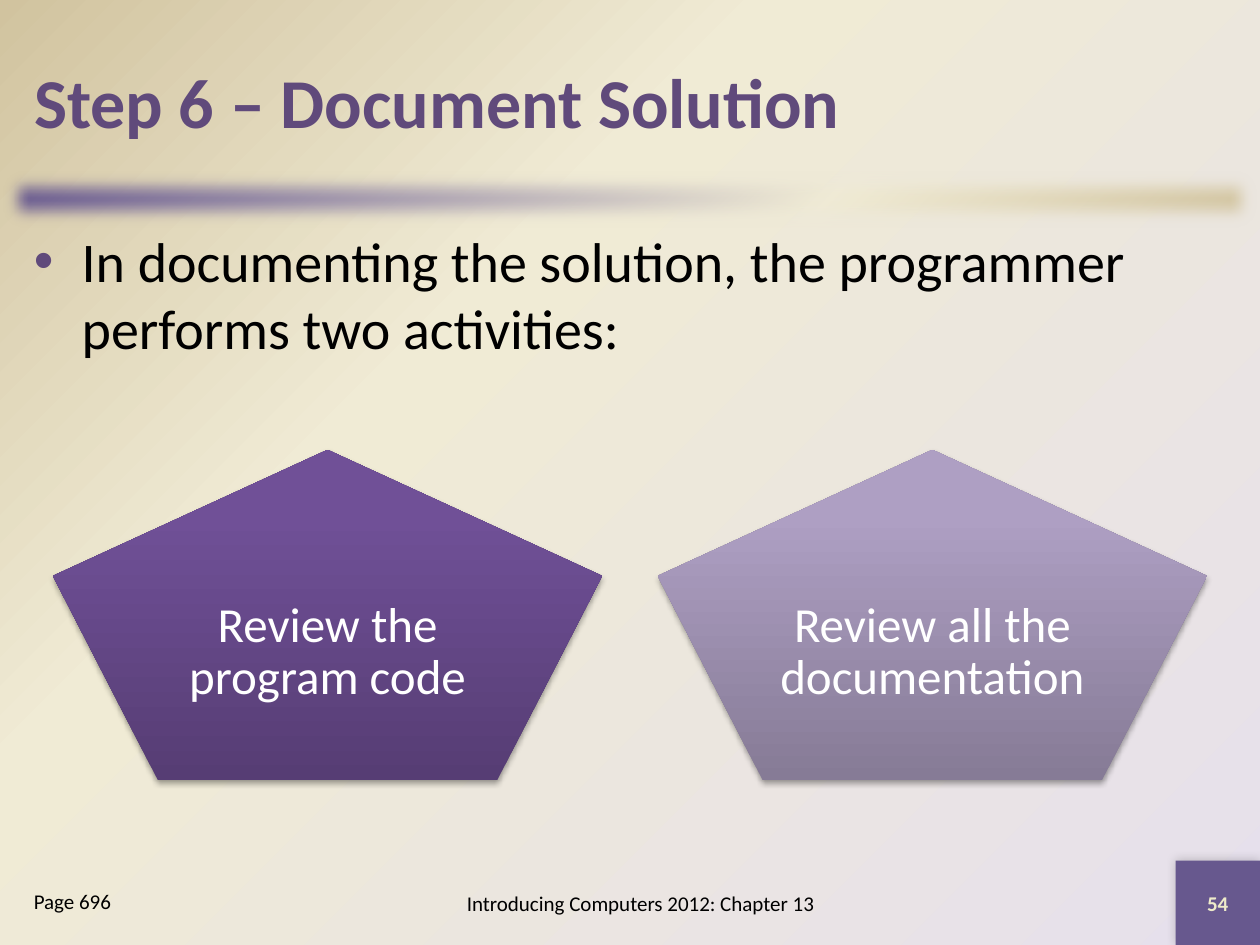
"""Build the 'Document Solution' slide with two activity pentagons."""
from lxml.etree import SubElement
from pptx import Presentation
from pptx.dml.color import RGBColor
from pptx.enum.shapes import MSO_SHAPE
from pptx.enum.text import MSO_ANCHOR, PP_ALIGN
from pptx.oxml.ns import qn
from pptx.util import Inches, Pt

BLACK = RGBColor(0x00, 0x00, 0x00)
WHITE = RGBColor(0xFF, 0xFF, 0xFF)
CREAM = RGBColor(0xF0, 0xEB, 0xD5)
TAN = RGBColor(0xD1, 0xC3, 0x9F)
LAVENDER = RGBColor(0xE6, 0xE0, 0xEC)
VIOLET = RGBColor(0x67, 0x58, 0x8E)
PURPLE = RGBColor(0x60, 0x4A, 0x7B)
PALE_YELLOW = RGBColor(0xEE, 0xEB, 0xCA)
DEEP = (RGBColor(0x56, 0x3D, 0x74), RGBColor(0x70, 0x50, 0x97), RGBColor(0x70, 0x4F, 0x99))
SOFT = (RGBColor(0x86, 0x7B, 0x96), RGBColor(0xAE, 0x9F, 0xC3), RGBColor(0xAE, 0x9F, 0xC4))


def add(parent, tag, **attrs):
    return SubElement(parent, qn(tag), {k: str(v) for k, v in attrs.items()})


class Deck:
    def __init__(self, prs, font="Calibri"):
        self.font = font
        self.s = prs.slides.add_slide(prs.slide_layouts[5])

    def gradient(self, fill, owner, colors, middle, angle=None):
        fill.gradient()
        grad = next(owner.iter(qn("a:gradFill")))
        for child in list(grad):
            grad.remove(child)
        stops = add(grad, "a:gsLst")
        for pos, color in zip((0, middle, 100), colors):
            add(add(stops, "a:gs", pos=pos * 1000), "a:srgbClr", val=color)
        if angle is None:
            shade = add(grad, "a:path", path="circle")
            add(shade, "a:fillToRect", l=100000, t=100000)
        else:
            add(grad, "a:lin", ang=angle * 60000, scaled=0)

    def background(self, colors):
        bg = self.s.background
        self.gradient(bg.fill, self.s.element, colors, 65)

    def shape(self, kind, box):
        sp = self.s.shapes.add_shape(kind, *map(Inches, box))
        sp.line.fill.background()
        sp.shadow.inherit = False
        return sp

    def effects(self, sp):
        return next(sp.element.iter(qn("a:effectLst")))

    def shadow(self, sp, alpha, blur, dist, angle):
        shadow = add(self.effects(sp), "a:outerShdw", blurRad=Pt(blur), dist=Pt(dist),
                     dir=angle * 60000, rotWithShape=0)
        add(add(shadow, "a:srgbClr", val=BLACK), "a:alpha", val=alpha * 1000)

    def bar(self, box, colors):
        sp = self.shape(MSO_SHAPE.RECTANGLE, box)
        self.gradient(sp.fill, sp.element, colors, 65, 45)
        add(self.effects(sp), "a:softEdge", rad=Pt(10))

    def corner(self, box, color):
        sp = self.shape(MSO_SHAPE.RECTANGLE, box)
        sp.fill.solid()
        sp.fill.fore_color.rgb = color
        self.shadow(sp, 20, 6, 0, 225)

    def set_text(self, sp, text, size, color=BLACK, bold=False,
                 align=PP_ALIGN.LEFT, anchor=MSO_ANCHOR.MIDDLE):
        tf = sp.text_frame
        tf.word_wrap = True
        tf.vertical_anchor = anchor
        p = tf.paragraphs[0]
        p.alignment = align
        r = p.add_run()
        r.text = text
        r.font.name, r.font.size, r.font.bold = self.font, Pt(size), bold
        r.font.color.rgb = color
        return p

    def title(self, box, text):
        sp = self.s.shapes.title
        sp.left, sp.top, sp.width, sp.height = map(Inches, box)
        self.set_text(sp, text, 40, PURPLE, bold=True)

    def text(self, box, text, size, **style):
        sp = self.s.shapes.add_textbox(*map(Inches, box))
        return self.set_text(sp, text, size, **style)

    def bullet(self, box, text):
        p = self.text(box, text, 32, anchor=MSO_ANCHOR.TOP)
        p.space_before = Pt(6.4)
        pPr = p._p.get_or_add_pPr()
        pPr.set("marL", str(Inches(0.38)))
        pPr.set("indent", str(Inches(-0.38)))
        add(add(pPr, "a:buClr"), "a:srgbClr", val=PURPLE)
        add(pPr, "a:buFont", typeface="Arial")
        add(pPr, "a:buChar", char="•")

    def pentagon(self, left, top, text, colors):
        sp = self.shape(MSO_SHAPE.REGULAR_PENTAGON, (left, top, 4.36, 2.62))
        self.gradient(sp.fill, sp.element, colors, 80, 270)
        self.shadow(sp, 35, 3.1, 1.8, 90)
        p = self.text((left + 0.83, top + 0.61, 2.7, 2), text, 28,
                      color=WHITE, align=PP_ALIGN.CENTER)
        p.line_spacing = 0.9


def main():
    prs = Presentation()
    prs.slide_width, prs.slide_height = Inches(10), Inches(7.5)
    deck = Deck(prs)
    corner_box = (9.33, 6.83, 0.67, 0.67)
    deck.background((LAVENDER, CREAM, TAN))
    deck.bar((0, 1.33, 10, 0.5), (VIOLET, CREAM, TAN))
    deck.corner(corner_box, VIOLET)
    deck.title((0.17, 0.17, 9.67, 1.25), "Step 6 – Document Solution")
    deck.bullet((0.17, 1.75, 9.67, 5.08),
                "In documenting the solution, the programmer performs two activities:")
    deck.text((3, 6.92, 4.17, 0.5), "Introducing Computers 2012: Chapter 13", 12,
              align=PP_ALIGN.CENTER)
    deck.text(corner_box, "54", 12, color=PALE_YELLOW, bold=True, align=PP_ALIGN.CENTER)
    deck.text((0.17, 7, 1.83, 0.5), "Page 696", 12, anchor=MSO_ANCHOR.TOP)
    activities = (("Review the program code", DEEP), ("Review all the documentation", SOFT))
    for i, (text, colors) in enumerate(activities):
        deck.pentagon(0.42 + 4.8 * i, 3.57, text, colors)
    prs.save("out.pptx")


if __name__ == "__main__":
    main()
